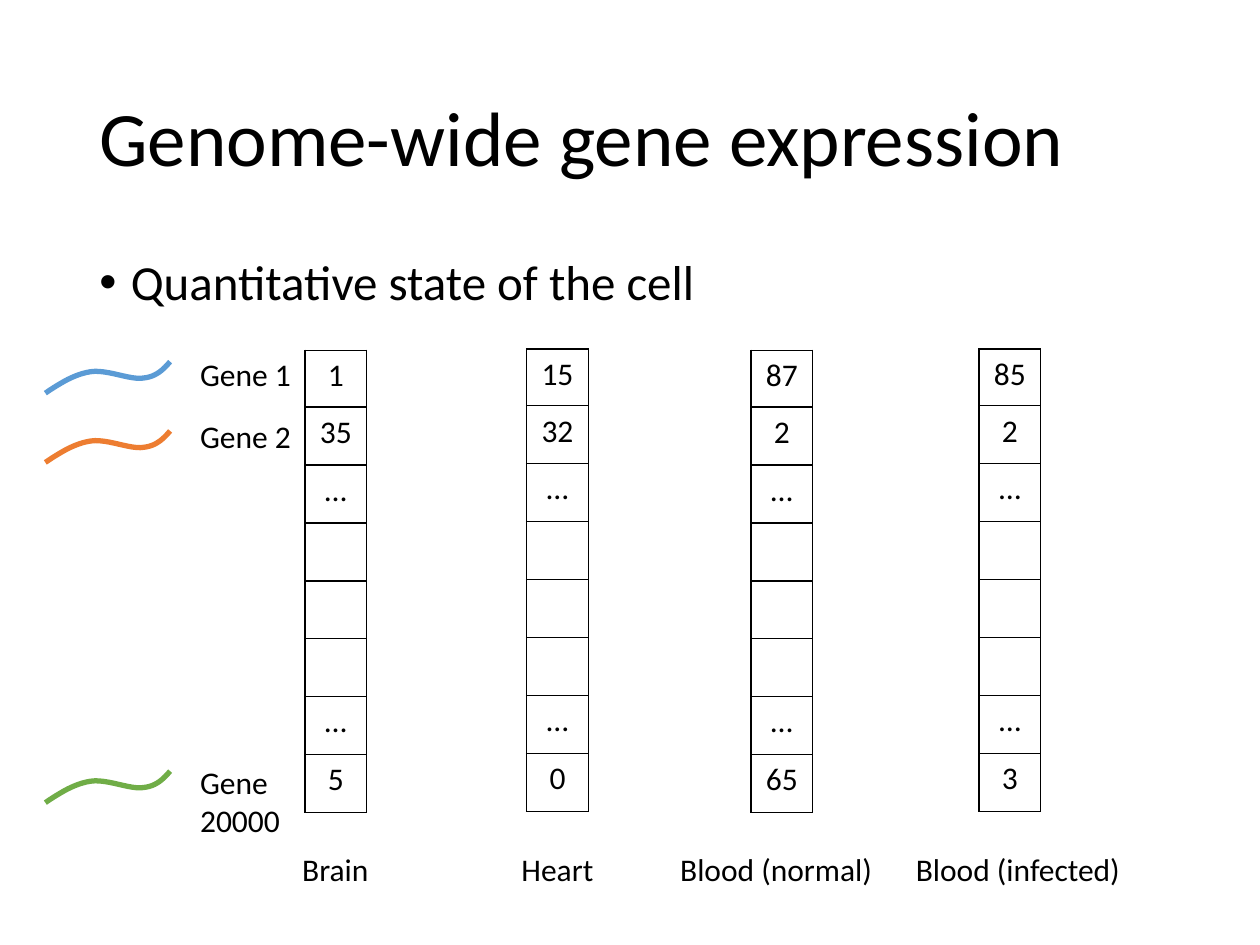
from lxml.etree import SubElement
from pptx import Presentation
from pptx.dml.color import RGBColor
from pptx.enum.text import MSO_ANCHOR, PP_ALIGN
from pptx.oxml import parse_xml
from pptx.oxml.ns import nsdecls, qn
from pptx.util import Inches, Pt

BLACK = RGBColor(0x00, 0x00, 0x00)
BLUE = RGBColor(0x5B, 0x9B, 0xD5)
ORANGE = RGBColor(0xED, 0x7D, 0x31)
GREEN = RGBColor(0x70, 0xAD, 0x47)

# Bezier segments of a strand, relative to its top left corner
WAVE = [
    ((0, 0.25), (0.12, 0.17), (0.23, 0.1), (0.36, 0.08)),
    ((0.36, 0.08), (0.49, 0.06), (0.68, 0.15), (0.78, 0.13)),
    ((0.78, 0.13), (0.88, 0.12), (0.94, 0.06), (0.99, 0)),
]
STEPS = 12


def bezier(curve, t):
    weights = ((1 - t) ** 3, 3 * t * (1 - t) ** 2, 3 * t * t * (1 - t), t ** 3)
    return [sum(w * p[i] for w, p in zip(weights, curve)) for i in (0, 1)]


class Board:
    font = "Calibri"
    size = 18

    def __init__(self, slide):
        self.slide = slide

    def style(self, par, size=None):
        for run in par.runs:
            run.font.name = self.font
            run.font.size = Pt(size or self.size)
            run.font.color.rgb = BLACK

    def text(self, words, x, y, w, h, size=None, wrap=False):
        box = self.slide.shapes.add_textbox(
            Inches(x), Inches(y), Inches(w), Inches(h))
        frame = box.text_frame
        frame.text = words
        frame.word_wrap = wrap
        for par in frame.paragraphs:
            self.style(par, size)
        return frame

    def title(self, words):
        frame = self.text(words, 0.69, 0.4, 8.62, 1.45, 44, True)
        frame.vertical_anchor = MSO_ANCHOR.MIDDLE
        frame.paragraphs[0].line_spacing = 0.9

    def bullet(self, words):
        frame = self.text(words, 0.69, 2, 8.62, 4.76, 28, True)
        par = frame.paragraphs[0]
        par.line_spacing = 0.9
        par.space_before = Pt(10)
        props = par._p.get_or_add_pPr()
        props.set("marL", str(Inches(0.25)))
        props.set("indent", str(-Inches(0.25)))
        SubElement(props, qn("a:buFont")).set("typeface", "Arial")
        SubElement(props, qn("a:buChar")).set("char", "•")

    def strand(self, y, color, x=0.36):
        dots = [bezier(curve, n / STEPS)
                for curve in WAVE for n in range(STEPS + 1)]
        dots = [(Inches(x + dx), Inches(y + dy)) for dx, dy in dots]
        path = self.slide.shapes.build_freeform(*dots[0])
        path.add_line_segments(dots[1:], close=False)
        shape = path.convert_to_shape()
        shape.shadow.inherit = False
        shape.fill.background()
        shape.line.color.rgb = color
        shape.line.width = Pt(3)

    def border(self, cell):
        props = cell._tc.get_or_add_tcPr()
        for place, side in enumerate("LRTB"):
            props.insert(place, parse_xml(
                f'<a:ln{side} {nsdecls("a")} w="{Pt(1)}"><a:solidFill>'
                f'<a:srgbClr val="{BLACK}"/></a:solidFill></a:ln{side}>'))

    def column(self, values, x, y):
        table = self.slide.shapes.add_table(
            len(values), 1, Inches(x), Inches(y),
            Inches(0.49), Inches(3.69)).table
        table.first_row = table.horz_banding = False
        for n, value in enumerate(values):
            table.rows[n].height = Inches(0.46 if n else 0.45)
            cell = table.cell(n, 0)
            cell.text_frame.text = value
            par = cell.text_frame.paragraphs[0]
            par.alignment = PP_ALIGN.CENTER
            self.style(par)
            cell.fill.background()
            self.border(cell)


def main():
    deck = Presentation()
    deck.slide_width, deck.slide_height = Inches(10), Inches(7.5)
    board = Board(deck.slides.add_slide(deck.slide_layouts[6]))

    # Heading
    board.title("Genome-wide gene expression")
    board.bullet("Quantitative state of the cell")

    # Genes: label, its top, width and height, strand top and colour
    genes = [
        ("Gene 1", 2.77, 0.93, 0.4, 2.87, BLUE),
        ("Gene 2", 3.26, 0.93, 0.4, 3.42, ORANGE),
        ("Gene\n20000", 6.01, 0.84, 0.71, 6.12, GREEN),
    ]
    for name, top, width, height, wave, color in genes:
        board.strand(wave, color)
        board.text(name, 1.49, top, width, height)

    # Tissues: first, second and last values, table place, label place
    tissues = [
        ("Brain", ("1", "35", "5"), 2.42, 2.78, 2.3, 0.73),
        ("Heart", ("15", "32", "0"), 4.18, 2.77, 4.04, 0.78),
        ("Blood (normal)", ("87", "2", "65"), 5.96, 2.78, 5.3, 1.74),
        ("Blood (infected)", ("85", "2", "3"), 7.77, 2.77, 7.17, 1.84),
    ]
    for name, (one, two, last), x, y, left, width in tissues:
        board.column([one, two, "…", "", "", "", "…", last], x, y)
        board.text(name, left, 6.7, width, 0.4)

    deck.save("out.pptx")


if __name__ == "__main__":
    main()
